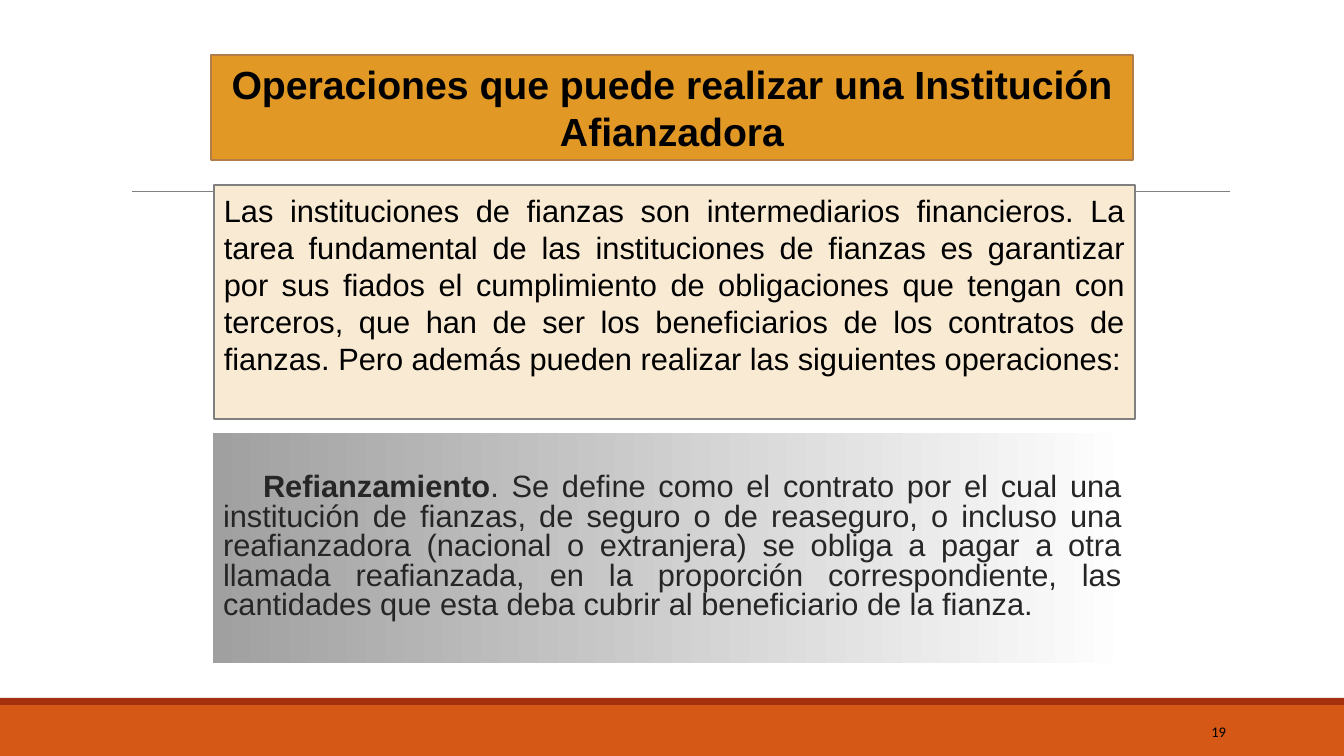
from dataclasses import dataclass

from pptx import Presentation
from pptx.dml.color import RGBColor
from pptx.enum.shapes import MSO_CONNECTOR as CONN, MSO_SHAPE as SHAPE
from pptx.enum.text import MSO_ANCHOR as ANCHOR, MSO_AUTO_SIZE as AUTO, PP_ALIGN as ALIGN
from pptx.oxml.ns import qn
from pptx.util import Pt

EMU_PER_PX = 914400 / 100.8


def px(n):
    return round(n * EMU_PER_PX)


@dataclass(frozen=True)
class Theme:
    font: str = "Arial"
    number_font: str = "Calibri"
    title_size: float = 28
    body_size: float = 22
    number_size: float = 10.5
    black: str = "000000"
    body_text: str = "262626"
    gray: str = "808080"
    title_fill: str = "E19825"
    title_line: str = "B27D49"
    intro_fill: str = "F9EAD3"
    fade: tuple = ("A0A0A0", "FFFFFF")
    footer: str = "D55816"
    footer_edge: str = "A5300F"


def add_run(p, text, *, font, size, color, bold=False):
    r = p.add_run()
    r.text = text
    r.font.name, r.font.size, r.font.bold = font, Pt(size), bold
    r.font.color.rgb = RGBColor.from_string(color)


class SlideBuilder:
    def __init__(self, prs, theme):
        self.theme = theme
        self.s = prs.slides.add_slide(prs.slide_layouts[1])

    def paint(self, sp, fill, line=None, width=1):
        sp.fill.solid()
        sp.fill.fore_color.rgb = RGBColor.from_string(fill)
        if line:
            sp.line.color.rgb = RGBColor.from_string(line)
            sp.line.width = Pt(width)
        else:
            sp.line.fill.background()

    def place(self, sp, x, y, w, h):
        sp.left, sp.top, sp.width, sp.height = map(px, (x, y, w, h))
        return sp

    def rect(self, x, y, w, h, fill, line=None, width=1):
        sp = self.s.shapes.add_shape(SHAPE.RECTANGLE, *map(px, (x, y, w, h)))
        sp.shadow.inherit = False
        self.paint(sp, fill, line, width)
        return sp

    def rule(self, x1, x2, y, color, width):
        line = self.s.shapes.add_connector(CONN.STRAIGHT, *map(px, (x1, y, x2, y)))
        line.line.color.rgb = RGBColor.from_string(color)
        line.line.width = Pt(width)
        line._element.spPr.append(line._element.makeelement(qn("a:effectLst"), {}))

    def title(self, x, y, w, h):
        sp = self.place(self.s.shapes.title, x, y, w, h)
        self.paint(sp, self.theme.title_fill, self.theme.title_line)
        return sp

    def body(self, x, y, w, h, first_indent):
        sp = self.place(self.s.placeholders[1], x, y, w, h)
        sp.fill.gradient()
        sp.fill.gradient_angle = 0
        for stop, color in zip(sp.fill.gradient_stops, self.theme.fade):
            stop.color.rgb = RGBColor.from_string(color)
        pPr = sp.text_frame.paragraphs[0]._p.get_or_add_pPr()
        pPr.set("marL", "0")
        pPr.set("indent", str(px(first_indent)))
        pPr.append(pPr.makeelement(qn("a:buNone"), {}))
        return sp

    def text_box(self, x, y, w, h):
        return self.s.shapes.add_textbox(*map(px, (x, y, w, h)))

    def put_text(self, sp, *parts, align, anchor=ANCHOR.MIDDLE, spacing=1.0, before=0, **style):
        tf = sp.text_frame
        tf.word_wrap, tf.auto_size, tf.vertical_anchor = True, AUTO.NONE, anchor
        p = tf.paragraphs[0]
        p.alignment, p.line_spacing, p.space_before = align, spacing, Pt(before)
        for text, bold in parts:
            add_run(p, text, bold=bold, **style)


def main():
    prs = Presentation()
    prs.slide_width, prs.slide_height = px(1344), px(756)
    t = Theme()
    b = SlideBuilder(prs, t)

    # Footer bands and horizontal rule
    b.rect(0, 705, 1344, 51, t.footer)
    b.rect(0, 698, 1344, 7, t.footer_edge)
    b.rule(132, 1230, 191, t.gray, 0.5)

    # Title
    b.put_text(b.title(211, 55, 922, 105),
               ("Operaciones que puede realizar una Institución Afianzadora", True),
               align=ALIGN.CENTER, font=t.font, size=t.title_size, color=t.black)

    # Introduction
    intro = b.rect(214, 185, 921, 234, t.intro_fill, t.gray, 1.25)
    intro.text_frame.margin_top = px(7)
    b.put_text(intro,
               ("Las instituciones de fianzas son intermediarios financieros. La tarea "
                "fundamental de las instituciones de fianzas es garantizar por sus fiados el "
                "cumplimiento de obligaciones que tengan con terceros, que han de ser los "
                "beneficiarios de los contratos de fianzas. Pero además pueden realizar las "
                "siguientes operaciones:", False),
               align=ALIGN.JUSTIFY, anchor=ANCHOR.TOP,
               font=t.font, size=t.body_size, color=t.black)

    # Definition
    b.put_text(b.body(213, 433, 919, 230, first_indent=40),
               ("Refianzamiento", True),
               (". Se define como el contrato por el cual una institución de fianzas, de "
                "seguro o de reaseguro, o incluso una reafianzadora (nacional o extranjera) "
                "se obliga a pagar a otra llamada reafianzada, en la proporción "
                "correspondiente, las cantidades que esta deba cubrir al beneficiario de la "
                "fianza.", False),
               align=ALIGN.JUSTIFY, spacing=0.8, before=4,
               font=t.font, size=t.body_size, color=t.body_text)

    # Slide number
    b.put_text(b.text_box(1092, 712, 144, 40), ("19", False), align=ALIGN.RIGHT,
               font=t.number_font, size=t.number_size, color=t.black)

    prs.save("out.pptx")


if __name__ == "__main__":
    main()
